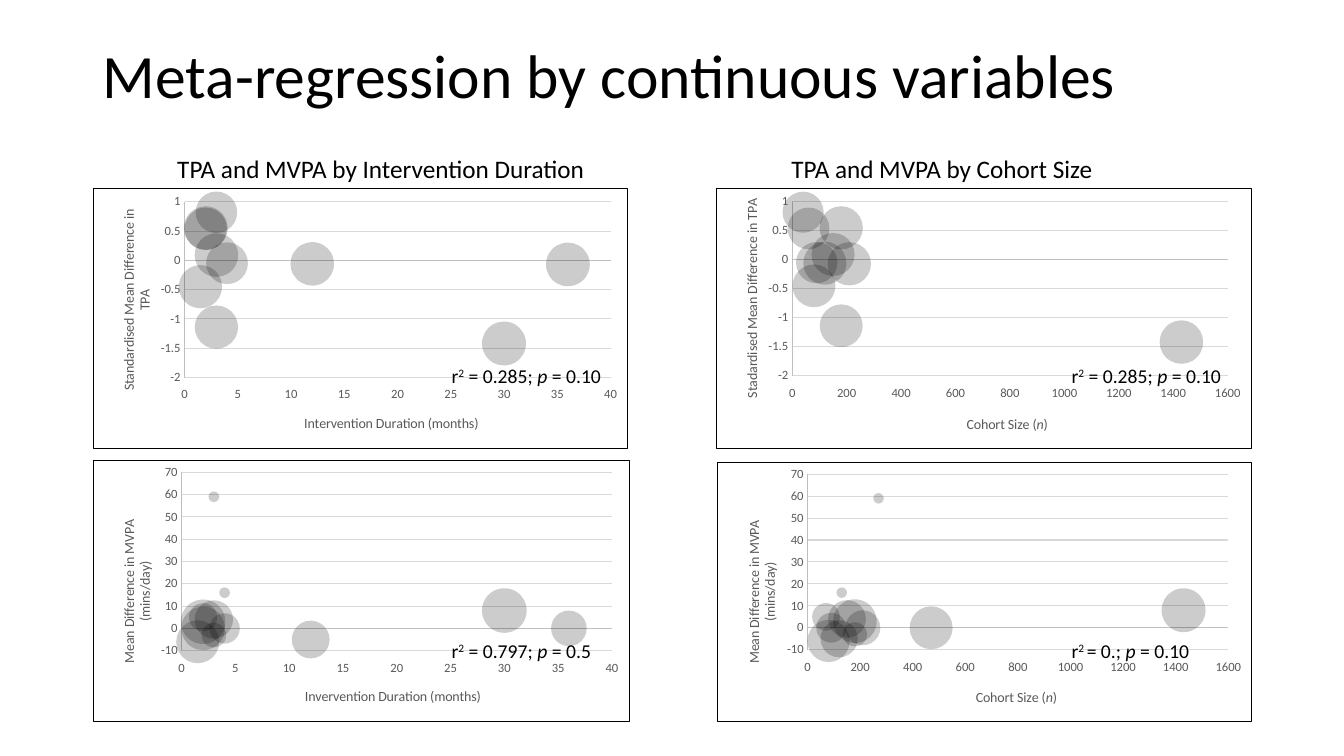
"""Slide of four bubble charts on meta-regression by continuous variables."""
from lxml.etree import SubElement
from pptx import Presentation
from pptx.chart.data import BubbleChartData
from pptx.dml.color import RGBColor
from pptx.enum.chart import XL_CHART_TYPE, XL_TICK_LABEL_POSITION, XL_TICK_MARK
from pptx.enum.text import MSO_ANCHOR, MSO_AUTO_SIZE, PP_ALIGN
from pptx.oxml import parse_xml
from pptx.oxml.ns import nsdecls, qn
from pptx.util import Inches, Pt

BLACK = RGBColor(0x00, 0x00, 0x00)
GREY = RGBColor(0x59, 0x59, 0x59)
AXIS = RGBColor(0xBF, 0xBF, 0xBF)
GRID = RGBColor(0xD9, 0xD9, 0xD9)

DURATION = [3, 36, 2, 12, 2, 1.5, 30, 3, 4, 3]
COHORT = [180, 210, 60, 120, 180, 80, 1430, 40, 90, 150]
TPA = [-1.14, -0.07, 0.54, -0.06, 0.55, -0.45, -1.42, 0.82, -0.05, 0.09]
TPA_SIZE = [10.1, 10.3, 9.6, 10.2, 10.3, 10.1, 10.4, 9.3, 9.4, 10.2]
MVPA_DURATION = [3, 3, 36, 2, 12, 2, 2, 1.5, 30, 4, 3, 4]
MVPA_COHORT = [270, 180, 210, 470, 120, 70, 180, 80, 1430, 90, 150, 130]
MVPA = [59, -3, 0, 0, -5, 5, 3, -6, 8, 0, 4, 16]
MVPA_SIZE = [0.8, 4.2, 8.8, 13.2, 9.9, 5.5, 13.7, 12.8, 13.8, 6.4, 10.2, 0.8]

TPA_SCALE = (-2, 1, 0.5)
MVPA_SCALE = (-10, 70, 10)
MONTHS = (0, 40, 5)
PEOPLE = (0, 1600, 200)
COHORT_TITLE = [("Cohort Size (", {}), ("n", {"italic": True}), (")", {})]
MVPA_TITLE = [("Mean Difference in MVPA (mins/day)", {})]

CHARTS = [
    dict(box=(6.9, 24.93, 39.83, 34.4), points=(DURATION, TPA, TPA_SIZE),
         scales=(MONTHS, TPA_SCALE), plot=(17.1, 5, 79.7, 67.8),
         x_title=[("Intervention Duration (months)", {})], x_at=(39, 86),
         y_title=[("Standardised Mean Difference in TPA", {})], y_at=(4.5, 7)),
    dict(box=(6.9, 60.8, 39.98, 34.67), points=(MVPA_DURATION, MVPA, MVPA_SIZE),
         scales=(MONTHS, MVPA_SCALE), plot=(16.5, 4.7, 80.2, 68.3),
         x_title=[("Invervention Duration (months)", {})], x_at=(39, 86),
         y_title=MVPA_TITLE, y_at=(4.5, 14.5)),
    dict(box=(53.26, 24.93, 39.91, 34.4), points=(COHORT, TPA, TPA_SIZE),
         scales=(PEOPLE, TPA_SCALE), plot=(14.2, 5, 81.3, 67.1),
         x_title=COHORT_TITLE, x_at=(46.2, 86),
         y_title=[("Stadardised Mean Difference in TPA", {})], y_at=(4.5, 3)),
    dict(box=(53.34, 61.07, 39.83, 34.4), points=(MVPA_COHORT, MVPA, MVPA_SIZE),
         scales=(PEOPLE, MVPA_SCALE), plot=(16.9, 4.7, 78.7, 67.7),
         x_title=COHORT_TITLE, x_at=(47.8, 86),
         y_title=MVPA_TITLE, y_at=(4.7, 14)),
]

HEADINGS = [
    ("TPA and MVPA by Intervention Duration", 12.45, 36.16),
    ("TPA and MVPA by Cohort Size", 58.14, 31.28),
]

NOTES = [
    (32.86, 47.47, "2", " = 0.285; ", " = 0.10"),
    (32.86, 83.87, "2", " = 0.797; ", " = 0.5"),
    (78.99, 47.47, "2", " = 0.285; ", " = 0.10"),
    (78.99, 83.87, "2 ", "= 0.; ", " = 0.10"),
]


def write(p, text, size=18, color=BLACK, font="Calibri", italic=False, raised=False):
    """Add one formatted run to a paragraph."""
    r = p.add_run()
    r.text = text
    r.font.name, r.font.size = font, Pt(size)
    r.font.bold, r.font.italic = False, italic
    r.font.color.rgb = color
    if raised:
        r.font._element.set("baseline", "30000")


def place(parent, index, **shares):
    """Give a chart part a manual layout in percent of the chart."""
    for old in parent.findall(qn("c:layout")):
        parent.remove(old)
    layout = parse_xml(f"<c:layout {nsdecls('c')}><c:manualLayout/></c:layout>")
    if "w" in shares:
        SubElement(layout[0], qn("c:layoutTarget")).set("val", "inner")
    for side in ("x", "y"):
        SubElement(layout[0], qn(f"c:{side}Mode")).set("val", "edge")
    for side, share in shares.items():
        SubElement(layout[0], qn(f"c:{side}")).set("val", f"{share / 100:.4f}")
    parent.insert(index, layout)


def outline(tag, dash=""):
    """Return shape properties holding a thin black line."""
    style = f'<a:prstDash val="{dash}"/>' if dash else ""
    return parse_xml(
        f'<c:{tag} {nsdecls("c", "a")}><a:ln w="6350"><a:solidFill>'
        f'<a:srgbClr val="{BLACK}"/></a:solidFill>{style}</a:ln></c:{tag}>')


class Deck:
    """Style and current slide."""

    def __init__(self):
        """Open a wide presentation with one titled slide."""
        self.prs = Presentation()
        self.prs.slide_width, self.prs.slide_height = Inches(13.33), Inches(7.5)
        self.s = self.prs.slides.add_slide(self.prs.slide_layouts[5])

    def box(self, x, y, w, h):
        """Turn percentages of the slide into lengths."""
        width, height = self.prs.slide_width, self.prs.slide_height
        return [int(share * full / 100) for share, full in
                ((x, width), (y, height), (w, width), (h, height))]

    def title(self, text, *area):
        """Fill and move the title placeholder."""
        sp = self.s.shapes.title
        sp.left, sp.top, sp.width, sp.height = self.box(*area)
        tf = sp.text_frame
        tf.auto_size, tf.vertical_anchor = MSO_AUTO_SIZE.NONE, MSO_ANCHOR.MIDDLE
        p = tf.paragraphs[0]
        p.alignment, p.line_spacing = PP_ALIGN.LEFT, 0.9
        write(p, text, size=44)

    def text(self, runs, *area, size=18):
        """Add a text box made of runs."""
        tf = self.s.shapes.add_textbox(*self.box(*area)).text_frame
        tf.word_wrap, tf.auto_size = True, MSO_AUTO_SIZE.SHAPE_TO_FIT_TEXT
        for text, fmt in runs:
            write(tf.paragraphs[0], text, size=size, **fmt)

    def axis(self, axis, runs, at, scale):
        """Style one axis and its title."""
        axis.minimum_scale, axis.maximum_scale, axis.major_unit = scale
        axis.has_major_gridlines = False
        axis.major_tick_mark = axis.minor_tick_mark = XL_TICK_MARK.NONE
        font = axis.tick_labels.font
        font.name, font.size, font.color.rgb = "Calibri", Pt(9), GREY
        axis.format.line.color.rgb, axis.format.line.width = AXIS, Pt(0.75)
        tf = axis.axis_title.text_frame
        for text, fmt in runs:
            write(tf.paragraphs[0], text, size=10, color=GREY, **fmt)
        place(axis.axis_title._element, 1, x=at[0], y=at[1])
        return tf

    def bubbles(self, box, points, scales, plot, x_title, x_at, y_title, y_at):
        """Add a bubble chart with a dashed linear trend."""
        data = BubbleChartData()
        series = data.add_series("Series 1")
        for point in zip(*points):
            series.add_data_point(*point)
        chart = self.s.shapes.add_chart(
            XL_CHART_TYPE.BUBBLE, *self.box(*box), data).chart
        chart.has_title = chart.has_legend = False
        chart.font.name, chart.font.size, chart.font.color.rgb = "Calibri", Pt(10), BLACK
        self.axis(chart.category_axis, x_title, x_at, scales[0])
        chart.category_axis.tick_label_position = XL_TICK_LABEL_POSITION.LOW
        tf = self.axis(chart.value_axis, y_title, y_at, scales[1])
        tf._txBody.bodyPr.set("rot", "-5400000")
        tf._txBody.bodyPr.set("vert", "horz")
        grid = chart.value_axis.major_gridlines.format.line
        grid.color.rgb, grid.width = GRID, Pt(0.75)

        ser = chart.plots[0].series[0]
        ser.format.fill.solid()
        ser.format.fill.fore_color.rgb = BLACK
        ser.format.line.fill.background()
        color = ser._element.find(".//" + qn("a:srgbClr"))
        SubElement(color, qn("a:alpha")).set("val", "20000")
        trend = parse_xml(f'<c:trendline {nsdecls("c")}><c:trendlineType val="linear"/>'
                          '<c:dispRSqr val="0"/><c:dispEq val="0"/></c:trendline>')
        trend.insert(0, outline("spPr", "dash"))
        ser._element.find(qn("c:xVal")).addprevious(trend)

        root = chart._chartSpace
        root.find(qn("c:chart")).addnext(outline("spPr"))
        place(root.chart.plotArea, 0, **dict(zip("xywh", plot)))


def main():
    """Build and save the slide."""
    deck = Deck()
    deck.title("Meta-regression by continuous variables", 6.9, 5.33, 86.27, 10.13)
    for heading, x, w in HEADINGS:
        deck.text([(heading, {})], x, 19.6, w, 5.33)
    for chart in CHARTS:
        deck.bubbles(**chart)
    for x, y, power, value, chance in NOTES:
        deck.text([("r", {}), (power, {"raised": True}), (value, {}),
                   ("p", {"italic": True}), (chance, {})], x, y, 16.58, 4.53, size=14)
    deck.prs.save("out.pptx")


if __name__ == "__main__":
    main()
